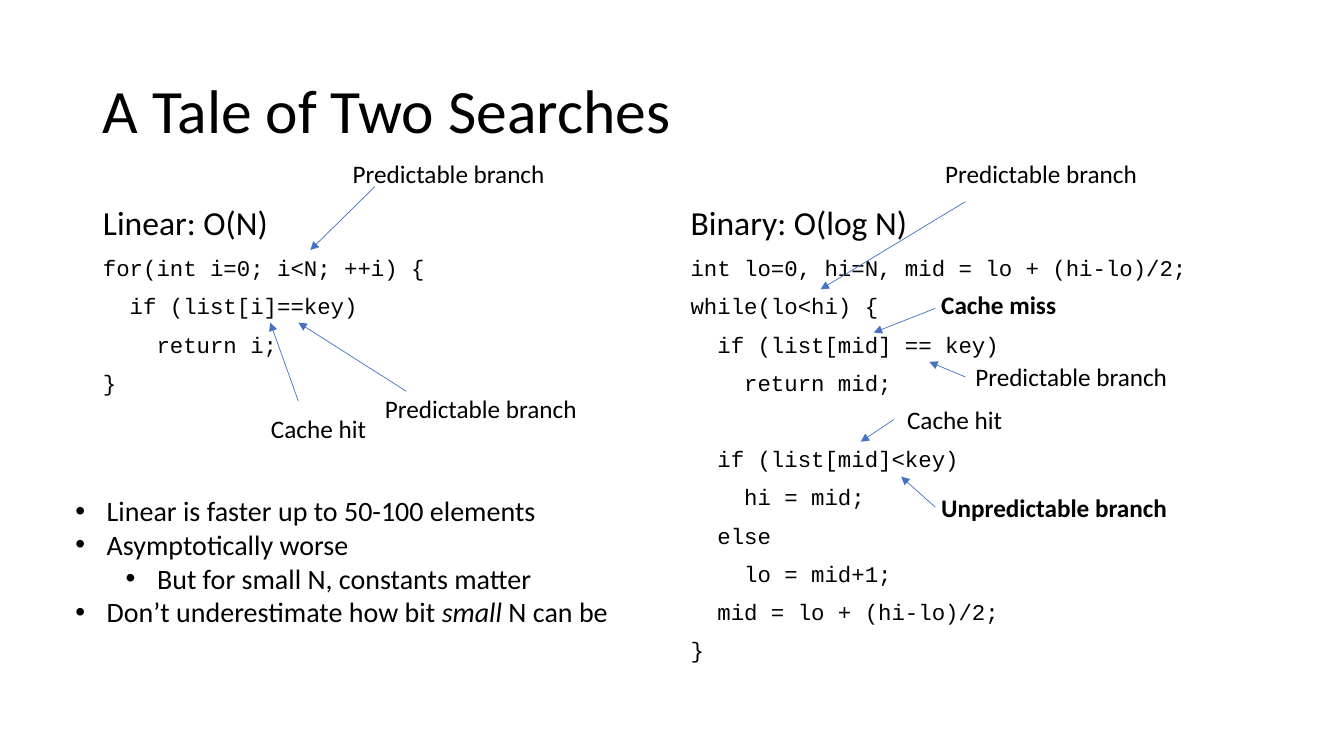
from lxml.etree import SubElement
from pptx import Presentation
from pptx.dml.color import RGBColor
from pptx.enum.shapes import MSO_CONNECTOR
from pptx.enum.text import MSO_ANCHOR, MSO_AUTO_SIZE, PP_ALIGN
from pptx.oxml.ns import qn
from pptx.util import Cm, Pt

COLORS = {"text": "000000", "arrow": "4472C4"}
SANS, MONO = "Calibri", "Courier New"
CODE_LINE, GAP = 17.3, 10

LINEAR = [
    "for(int i=0; i<N; ++i) {",
    "  if (list[i]==key)",
    "    return i;",
    "}",
]
BINARY = [
    "int lo=0, hi=N, mid = lo + (hi-lo)/2;",
    "while(lo<hi) {",
    "  if (list[mid] == key)",
    "    return mid;",
    "  if (list[mid]<key)",
    "    hi = mid;",
    "  else",
    "    lo = mid+1;",
    "  mid = lo + (hi-lo)/2;",
    "}",
]
WIDTHS = {
    "Predictable branch": 5.41,
    "Cache hit": 2.95,
    "Cache miss": 3.4,
    "Unpredictable branch": 6.25,
}
# Label, bold, label corner, arrow start, arrow tip
NOTES = [
    ("Predictable branch", False, (8.64, 3.86), (9.45, 4.7), (7.82, 6.3)),
    ("Cache hit", False, (6.58, 10.29), (7.52, 10.11), (6.81, 8.13)),
    ("Predictable branch", False, (23.57, 3.86), (24.33, 5.08), (20.68, 7.29)),
    ("Predictable branch", False, (9.45, 9.78), (10.24, 9.86), (7.52, 8.13)),
    ("Cache miss", True, (23.47, 7.16), (23.57, 7.77), (22.02, 8.38)),
    ("Predictable branch", False, (24.33, 8.99), (24.33, 9.5), (23.42, 9.12)),
    ("Cache hit", False, (22.61, 10.06), (22.53, 10.57), (21.69, 11.13)),
    ("Unpredictable branch", True, (23.47, 12.27), (23.57, 12.78), (22.71, 12.01)),
]
# Level and runs; every second run is italic
POINTS = [
    (0, ["Linear is faster up to 50-100 elements"]),
    (0, ["Asymptotically worse"]),
    (1, ["But for small N, constants matter"]),
    (0, ["Don’t underestimate how bit ", "small", " N can be"]),
]


class Deck:
    def __init__(self):
        self.prs = Presentation()
        self.prs.slide_width, self.prs.slide_height = Cm(33.87), Cm(19.05)
        self.slide = self.prs.slides.add_slide(self.prs.slide_layouts[3])

    def style(self, para, size, face=SANS, bold=False):
        for run in para.runs:
            font = run.font
            font.name, font.size, font.bold = face, Pt(size), bold
            font.color.rgb = RGBColor.from_string(COLORS["text"])

    def bullet(self, para, mark, left=0, hang=0):
        props = para._p.get_or_add_pPr()
        props.set("marL", str(Cm(left)))
        props.set("indent", str(Cm(-hang)))
        if mark:
            SubElement(props, qn("a:buFont"), typeface="Arial")
            SubElement(props, qn("a:buChar"), char=mark)
        else:
            SubElement(props, qn("a:buNone"))

    def place(self, shape, left, top, width, height):
        shape.left, shape.top = Cm(left), Cm(top)
        shape.width, shape.height = Cm(width), Cm(height)
        shape.text_frame.auto_size = MSO_AUTO_SIZE.NONE

    def title(self, text):
        shape = self.slide.shapes.title
        self.place(shape, 2.34, 1.02, 29.21, 3.68)
        frame = shape.text_frame
        frame.text = text
        frame.vertical_anchor = MSO_ANCHOR.MIDDLE
        para = frame.paragraphs[0]
        para.alignment, para.line_spacing = PP_ALIGN.LEFT, 0.9
        self.style(para, 44)

    def code(self, index, left, head, lines, split=None):
        shape = self.slide.placeholders[index]
        self.place(shape, left, 5.08, 14.4, 12.09)
        frame = shape.text_frame
        frame.text = "\n".join([head] + lines)
        for row, para in enumerate(frame.paragraphs):
            para.space_before = Pt(GAP)
            para.line_spacing = Pt(CODE_LINE) if row else 0.9
            if row and row == split:
                para.space_before = Pt(2 * GAP + CODE_LINE)
            self.bullet(para, None)
            self.style(para, 16 if row else 24, MONO if row else SANS)

    def box(self, left, top, width, height):
        shape = self.slide.shapes.add_textbox(
            Cm(left), Cm(top), Cm(width), Cm(height))
        shape.text_frame.word_wrap = False
        return shape.text_frame

    def label(self, text, bold, spot):
        frame = self.box(*spot, WIDTHS[text], 1.03)
        frame.text = text
        self.style(frame.paragraphs[0], 18, bold=bold)

    def arrow(self, start, tip):
        line = self.slide.shapes.add_connector(
            MSO_CONNECTOR.STRAIGHT, *map(Cm, start + tip))
        line.line.width = Pt(0.5)
        line.line.color.rgb = RGBColor.from_string(COLORS["arrow"])
        SubElement(line.line._get_or_add_ln(), qn("a:tailEnd"), type="triangle")
        SubElement(line._element.spPr, qn("a:effectLst"))

    def points(self, items):
        frame = self.box(1.65, 12.32, 14.05, 3.68)
        for row, (level, parts) in enumerate(items):
            para = frame.add_paragraph() if row else frame.paragraphs[0]
            para.level = level
            for spot, text in enumerate(parts):
                run = para.add_run()
                run.text = text
                run.font.italic = spot % 2 == 1
            self.bullet(para, "•", 0.79 + 1.27 * level, 0.79)
            self.style(para, 20)


def main():
    deck = Deck()
    # Title and the two code columns
    deck.title("A Tale of Two Searches")
    deck.code(1, 2.34, "Linear: O(N)", LINEAR)
    deck.code(2, 17.15, "Binary: O(log N)", BINARY, split=5)
    # Notes on the code
    for text, bold, spot, start, tip in NOTES:
        deck.arrow(start, tip)
        deck.label(text, bold, spot)
    # Takeaways
    deck.points(POINTS)
    deck.prs.save("out.pptx")


if __name__ == "__main__":
    main()
